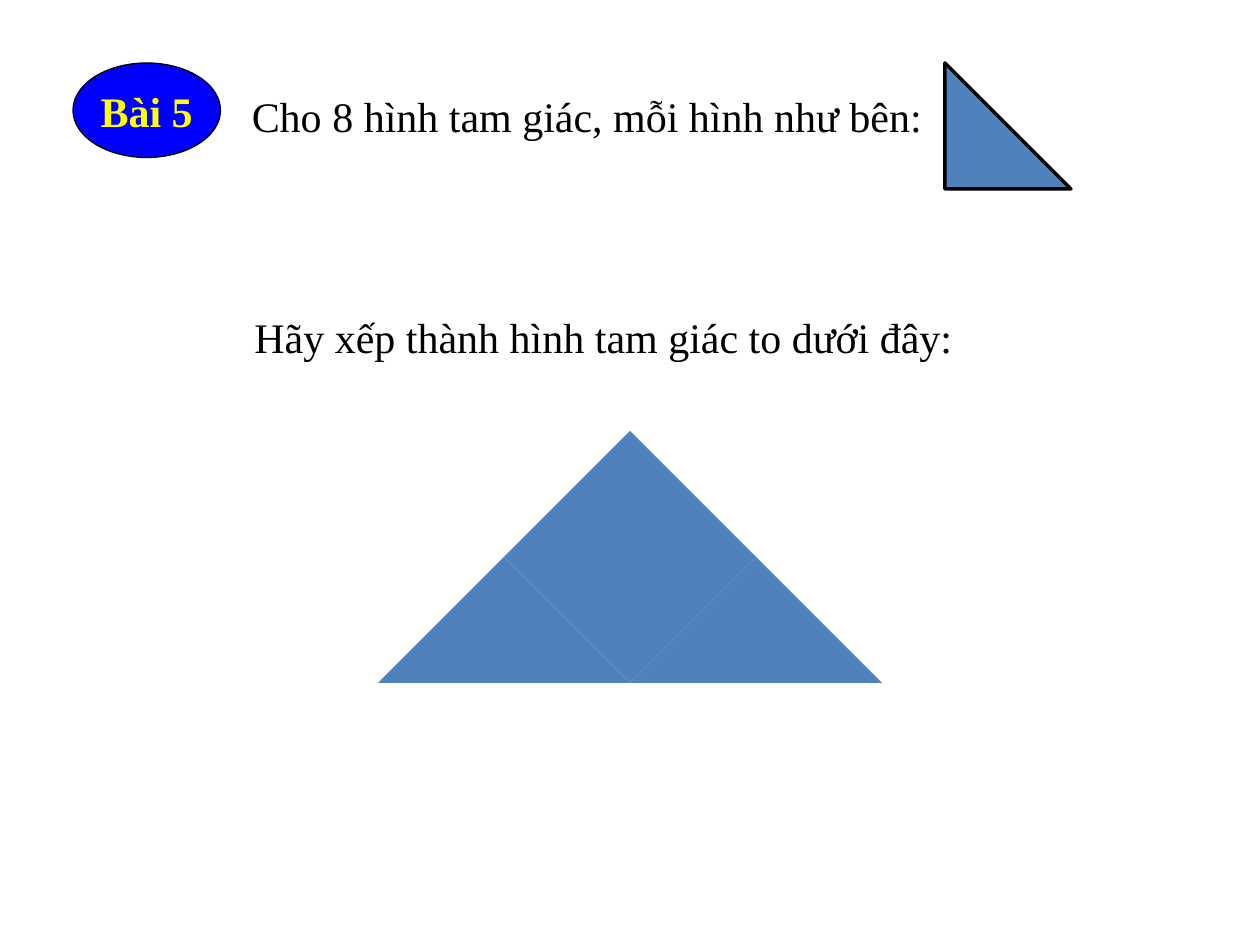
import pptx
import pptx.util
import pptx.dml.color
import pptx.enum.shapes
import pptx.enum.text

BLUE = pptx.dml.color.RGBColor(0x00, 0x00, 0xFF)
YELLOW = pptx.dml.color.RGBColor(0xFF, 0xFF, 0x00)
BLACK = pptx.dml.color.RGBColor(0x00, 0x00, 0x00)
STEEL = pptx.dml.color.RGBColor(0x4F, 0x81, 0xBD)
SHAPE = pptx.enum.shapes.MSO_SHAPE

presentation = pptx.Presentation()
presentation.slide_width = pptx.util.Inches(10)
presentation.slide_height = pptx.util.Inches(7.5)
slide = presentation.slides.add_slide(presentation.slide_layouts[6])

# The grid cell is one small triangle wide and high
CELL = presentation.slide_width // 10


def write(shape, text, color, bold=False):
    text_frame = shape.text_frame
    text_frame.text = text
    text_frame.word_wrap = False
    font = text_frame.paragraphs[0].runs[0].font
    font.name = "Times New Roman"
    font.size = pptx.util.Pt(24)
    font.bold = bold
    font.color.rgb = color


def add_filled(shapes, kind, column, row, width, height, fill, line_width=0):
    shape = shapes.add_shape(kind, *(round(n * CELL) for n in (column, row, width, height)))
    shape.shadow.inherit = False
    shape.fill.solid()
    shape.fill.fore_color.rgb = fill
    if line_width:
        shape.line.color.rgb = BLACK
        shape.line.width = pptx.util.Pt(line_width)
    else:
        shape.line.fill.background()
    return shape


# Exercise badge
badge = add_filled(slide.shapes, SHAPE.OVAL, 0.58, 0.5, 1.17, 0.75, BLUE, 0.75)
write(badge, "Bài 5", YELLOW, bold=True)
badge.text_frame.vertical_anchor = pptx.enum.text.MSO_ANCHOR.MIDDLE
badge.text_frame.paragraphs[0].alignment = pptx.enum.text.PP_ALIGN.CENTER

# Instructions
for text, column, row, width in (
    ("Cho 8 hình tam giác, mỗi hình như bên:", 1.9, 0.67, 5.57),
    ("Hãy xếp thành hình tam giác to dưới đây:", 1.92, 2.42, 5.79),
):
    box = slide.shapes.add_textbox(*(round(n * CELL) for n in (column, row, width, 0.5)))
    write(box, text, BLACK)
    box.text_frame.auto_size = pptx.enum.text.MSO_AUTO_SIZE.SHAPE_TO_FIT_TEXT

# Large triangle assembled from eight small ones: column, row, rotation
big_triangle = slide.shapes.add_group_shape()
for column, row, rotation in (
    (5, 0, 0), (4, 0, 270),
    (4, 1, 0), (6, 1, 0),
    (5, 1, 270), (3, 1, 270),
    (5, 1, 90), (4, 1, 180),
):
    piece = add_filled(big_triangle.shapes, SHAPE.RIGHT_TRIANGLE, column, 3.42 + row, 1, 1, STEEL)
    piece.rotation = rotation

# Sample triangle
add_filled(slide.shapes, SHAPE.RIGHT_TRIANGLE, 7.5, 0.5, 1, 1, STEEL, 2)

presentation.save("out.pptx")
